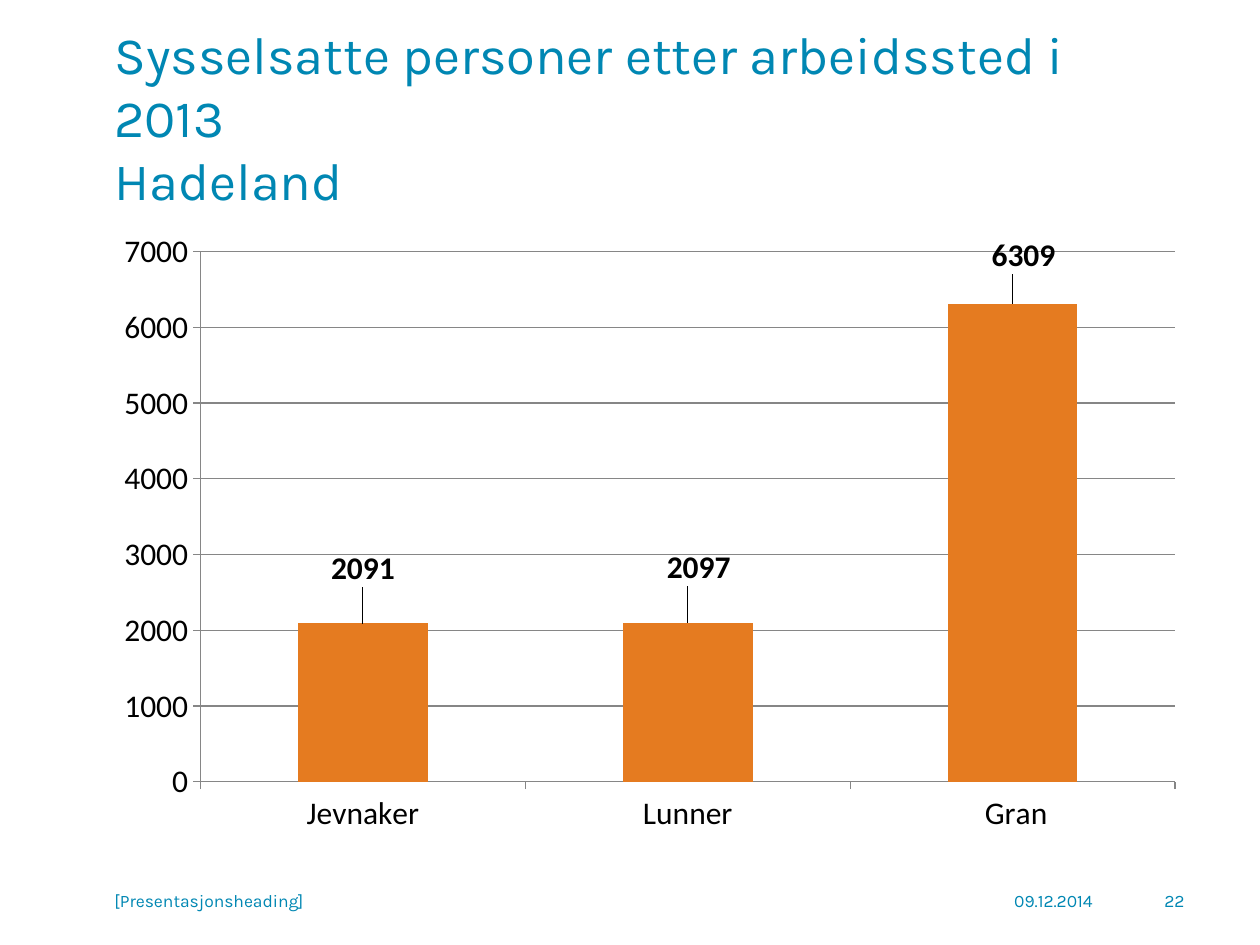
import lxml.etree
import pptx
import pptx.chart.data
import pptx.dml.color
import pptx.enum.chart
import pptx.enum.text
import pptx.oxml.ns
import pptx.util
from dataclasses import dataclass

Inches = pptx.util.Inches
Pt = pptx.util.Pt
RGBColor = pptx.dml.color.RGBColor
Align = pptx.enum.text.PP_ALIGN


@dataclass(frozen=True)
class Theme:
    heading_font: str = "Karla"
    chart_font: str = "Calibri"
    blue: RGBColor = RGBColor(0x00, 0x87, 0xB3)
    orange: RGBColor = RGBColor(0xE5, 0x7B, 0x20)
    gray: RGBColor = RGBColor(0x86, 0x86, 0x86)
    black: RGBColor = RGBColor(0, 0, 0)
    title_size: int = 30
    chart_size: int = 18
    footer_size: int = 10


THEME = Theme()
LEFT, WIDTH = 0.81, 8.69
FOOTER_TOP, FOOTER_HEIGHT = 6.95, 0.4
TEXTS = [
    ("Sysselsatte personer etter arbeidssted i 2013\vHadeland",
     (LEFT, 0.3, WIDTH, 1.25), THEME.title_size, Align.LEFT, 0.2),
    ("09.12.2014", (7.35, FOOTER_TOP, 1.42, FOOTER_HEIGHT),
     THEME.footer_size, Align.RIGHT, 0.1),
    ("[Presentasjonsheading]", (LEFT, FOOTER_TOP, 4.62, FOOTER_HEIGHT),
     THEME.footer_size, Align.LEFT, 0.1),
    ("22", (8.83, FOOTER_TOP, 0.67, FOOTER_HEIGHT),
     THEME.footer_size, Align.RIGHT, 0.1),
]
EMPLOYED = {"Jevnaker": 2091, "Lunner": 2097, " Gran": 6309}
LABEL_OFFSETS = [(0, -0.05), (0.01, -0.05), (0.01, -0.04)]
CHART_BOX = (LEFT, 1.75, WIDTH, 4.95)
PLOT_LAYOUT = {"layoutTarget": "inner", "xMode": "edge", "yMode": "edge",
               "x": 0.09, "y": 0.05, "w": 0.89, "h": 0.85}


def add_text(slide, text, box, size, alignment, right_margin):
    shape = slide.shapes.add_textbox(*map(Inches, box))
    frame = shape.text_frame
    frame.word_wrap = True
    frame.margin_right = Inches(right_margin)
    frame.vertical_anchor = pptx.enum.text.MSO_ANCHOR.MIDDLE
    paragraph = frame.paragraphs[0]
    paragraph.text = text
    paragraph.alignment = alignment
    paragraph.font.name = THEME.heading_font
    paragraph.font.size = Pt(size)
    paragraph.font.color.rgb = THEME.blue


def insert_layout(parent, index, values):
    name = pptx.oxml.ns.qn
    for old in parent.findall(name("c:layout")):
        parent.remove(old)
    layout = lxml.etree.Element(name("c:layout"))
    manual = lxml.etree.SubElement(layout, name("c:manualLayout"))
    for key, value in values.items():
        lxml.etree.SubElement(manual, name(f"c:{key}")).set("val", str(value))
    parent.insert(index, layout)


def style_axes(chart):
    value_axis, category_axis = chart.value_axis, chart.category_axis
    value_axis.minimum_scale, value_axis.maximum_scale = 0, 7000
    value_axis.major_unit = 1000
    value_axis.has_major_gridlines = True
    for axis in (value_axis, category_axis):
        axis.major_tick_mark = pptx.enum.chart.XL_TICK_MARK.OUTSIDE
    for line in (value_axis.major_gridlines.format.line,
                 value_axis.format.line, category_axis.format.line):
        line.color.rgb = THEME.gray
        line.width = Pt(0.75)


def add_chart(slide):
    data = pptx.chart.data.CategoryChartData(number_format="General")
    data.categories = list(EMPLOYED)
    data.add_series("Series 1", list(EMPLOYED.values()))
    chart = slide.shapes.add_chart(
        pptx.enum.chart.XL_CHART_TYPE.COLUMN_CLUSTERED,
        *map(Inches, CHART_BOX), data).chart
    chart.has_title = False
    chart.has_legend = False
    chart.font.name = THEME.chart_font
    chart.font.size = Pt(THEME.chart_size)
    chart.font.color.rgb = THEME.black
    style_axes(chart)

    plot = chart.plots[0]
    plot.gap_width = 150
    plot.vary_by_categories = False
    series = plot.series[0]
    series.format.fill.solid()
    series.format.fill.fore_color.rgb = THEME.orange
    series.data_labels.show_value = True
    for index in range(len(EMPLOYED)):
        label = series.points[index].data_label
        label.position = pptx.enum.chart.XL_LABEL_POSITION.OUTSIDE_END
        label.font.name = THEME.chart_font
        label.font.size = Pt(THEME.chart_size)
        label.font.bold = True
        label.font.color.rgb = THEME.black
    labels = series.data_labels._element.xpath("c:dLbl")
    for label, (x, y) in zip(labels, LABEL_OFFSETS):
        insert_layout(label, 1, {"x": x, "y": y})
    insert_layout(chart._chartSpace.xpath("c:chart/c:plotArea")[0], 0, PLOT_LAYOUT)


def main():
    presentation = pptx.Presentation()
    presentation.slide_width = Inches(10)
    presentation.slide_height = Inches(7.5)
    slide = presentation.slides.add_slide(presentation.slide_layouts[6])
    for text in TEXTS:
        add_text(slide, *text)
    add_chart(slide)
    presentation.save("out.pptx")


if __name__ == "__main__":
    main()
